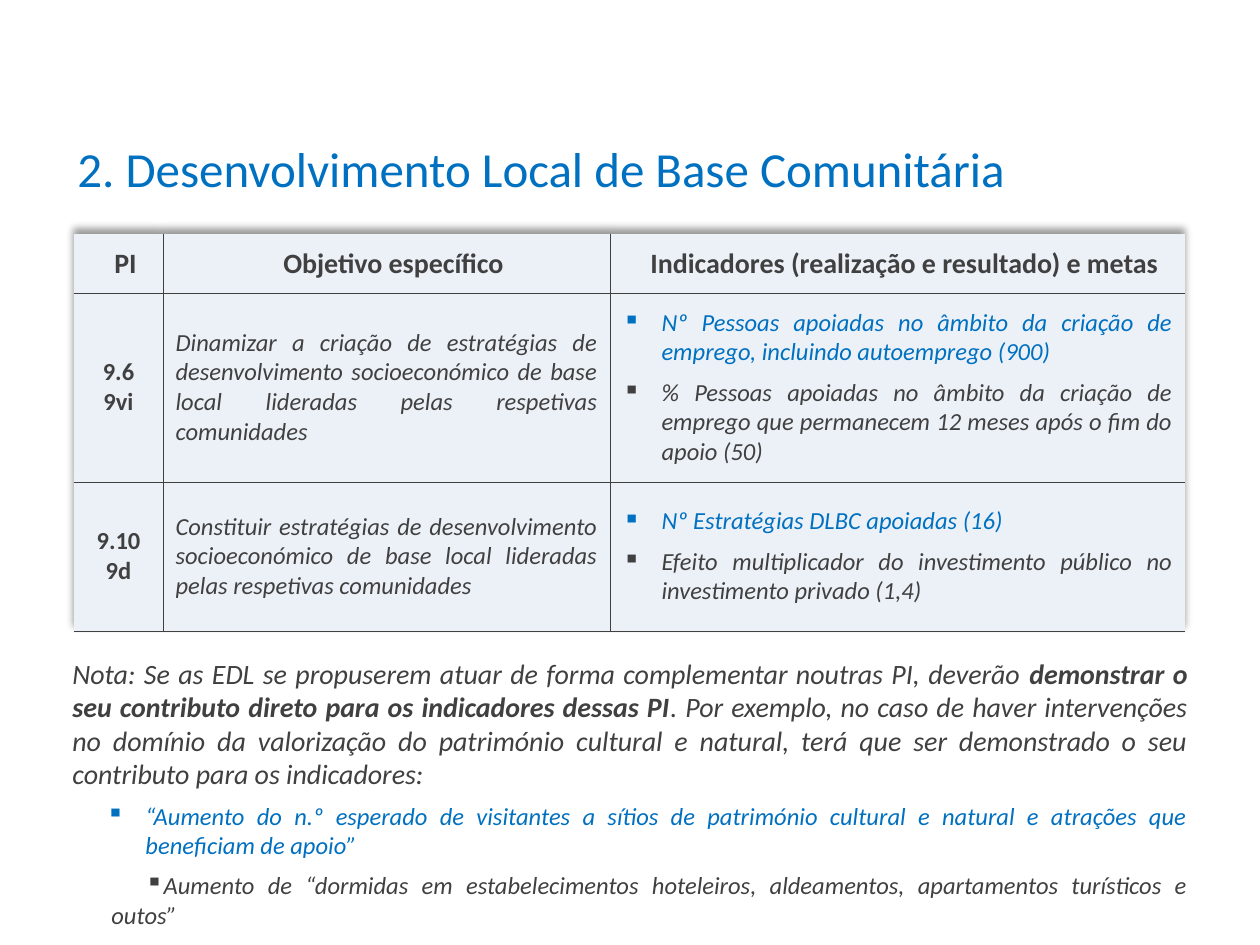
import lxml.etree
import pptx
import pptx.dml.color
import pptx.enum.text
import pptx.oxml.ns
import pptx.util

PX = 914400 / 126
COLORS = {"text": "404040", "accent": "0070C0", "cell": "ECF1F8", "shadow": "000000"}
ALIGN = pptx.enum.text.PP_ALIGN
NO_STYLE = "{2D5ABB26-0587-4C30-8999-92F81FD0307C}"
HEADERS = ["PI", "Objetivo específico", "Indicadores (realização e resultado) e metas"]
PRIORITIES = [
    (["9.6", "9vi"],
     "Dinamizar a criação de estratégias de desenvolvimento socioeconómico de base local "
     "lideradas pelas respetivas comunidades",
     ["Nº Pessoas apoiadas no âmbito da criação de emprego, incluindo autoemprego (900)",
      "% Pessoas apoiadas no âmbito da criação de emprego que permanecem 12 meses após o "
      "fim do apoio (50)"]),
    (["9.10", "9d"],
     "Constituir estratégias de desenvolvimento socioeconómico de base local lideradas "
     "pelas respetivas comunidades",
     ["Nº Estratégias DLBC apoiadas (16)",
      "Efeito multiplicador do investimento público no investimento privado (1,4)"]),
]
NOTE = [
    ("Nota: Se as EDL se propuserem atuar de forma complementar noutras PI, deverão ", False),
    ("demonstrar o seu contributo direto para os indicadores dessas PI", True),
    (". Por exemplo, no caso de haver intervenções no domínio da valorização do património "
     "cultural e natural, terá que ser demonstrado o seu contributo para os indicadores:", False),
]
VISITORS = ("“Aumento do n.º esperado de visitantes a sítios de património cultural e natural "
            "e atrações que beneficiam de apoio”")
STAYS = ("Aumento de “dormidas em estabelecimentos hoteleiros, aldeamentos, apartamentos "
         "turísticos e outos”")


def px(length):
    """Turn pixels into EMU."""
    return pptx.util.Emu(round(length * PX))


def child(parent, tag, **attributes):
    """Append a drawing element with attributes."""
    element = lxml.etree.SubElement(parent, pptx.oxml.ns.qn(tag))
    for name, value in attributes.items():
        element.set(name, str(value))
    return element


def write(frame, text, size=14, color="text", bold=False, italic=False,
          align=ALIGN.LEFT, bullet=None, before=0):
    """Add a paragraph of text, or of (text, bold) parts, to a text frame."""
    first = frame.paragraphs[0]
    paragraph = frame.add_paragraph() if first.runs else first
    paragraph.alignment = align
    if bullet:
        properties = paragraph._p.get_or_add_pPr()
        margin, indent = bullet
        properties.set("marL", str(px(margin)))
        properties.set("indent", str(px(indent)))
        child(properties, "a:buChar", char="▪")
    if before:
        paragraph.space_before = pptx.util.Pt(before)
    for part, strong in [(text, bold)] if isinstance(text, str) else text:
        run = paragraph.add_run()
        run.text = part
        run.font.name = "Calibri"
        run.font.size = pptx.util.Pt(size)
        run.font.bold = strong
        run.font.italic = italic
        run.font.color.rgb = pptx.dml.color.RGBColor.from_string(COLORS[color])


def add_text_frame(slide, left, top, width, height):
    """Add a wrapping text box and return its frame."""
    frame = slide.shapes.add_textbox(px(left), px(top), px(width), px(height)).text_frame
    frame.word_wrap = True
    return frame


def style_cell(cell, sides):
    """Rule the given sides of a cell, then fill it."""
    cell.vertical_anchor = pptx.enum.text.MSO_ANCHOR.MIDDLE
    properties = cell._tc.get_or_add_tcPr()
    for side in sides:
        line = child(properties, f"a:ln{side}", w=pptx.util.Pt(0.25))
        child(child(line, "a:solidFill"), "a:srgbClr", val=COLORS["text"])
    cell.fill.solid()
    cell.fill.fore_color.rgb = pptx.dml.color.RGBColor.from_string(COLORS["cell"])


def add_shadow(table):
    """Give the table a soft shadow along its top."""
    properties = table._tbl.tblPr
    effects = child(properties, "a:effectLst")
    properties.insert(0, effects)
    shadow = child(effects, "a:outerShdw", blurRad=50800, dist=38100, dir=16200000,
                   algn="b", rotWithShape=0)
    child(child(shadow, "a:srgbClr", val=COLORS["shadow"]), "a:alpha", val=40000)


def add_priorities(slide):
    """Build the table of priorities, objectives and indicators."""
    widths, heights = [89, 447, 575], [59, 189, 149]
    table = slide.shapes.add_table(len(heights), len(widths), px(74), px(234),
                                   px(sum(widths)), px(sum(heights))).table
    table.first_row = table.horz_banding = False
    table._tbl.tblPr.find(pptx.oxml.ns.qn("a:tableStyleId")).text = NO_STYLE
    add_shadow(table)
    for column, width in zip(table.columns, widths):
        column.width = px(width)
    for index, height in enumerate(heights):
        table.rows[index].height = px(height)
        for column, sides in enumerate(["RB", "LRB", "LB"]):
            style_cell(table.cell(index, column), sides if index == 0 else sides.replace("B", "TB"))
    for column, header in enumerate(HEADERS):
        cell = table.cell(0, column)
        cell.margin_left, cell.margin_right = px(15), px(1)
        cell.margin_top, cell.margin_bottom = px(1), px(0)
        write(cell.text_frame, header, size=16, bold=True, align=ALIGN.CENTER)
    for row, (codes, objective, indicators) in enumerate(PRIORITIES, start=1):
        code_frame, objective_frame, indicator_frame = (
            table.cell(row, column).text_frame for column in range(3))
        for code in codes:
            write(code_frame, code, bold=True, align=ALIGN.CENTER)
        write(objective_frame, objective, italic=True, align=ALIGN.JUSTIFY)
        for indicator, color, before in zip(indicators, ["accent", "text"], [0, 6]):
            write(indicator_frame, indicator, color=color, italic=True,
                  align=ALIGN.JUSTIFY, bullet=(39, -39), before=before)


def add_note(slide):
    """Write the note and its two example indicators."""
    frame = add_text_frame(slide, 60, 650, 1140, 258)
    write(frame, NOTE, size=16, italic=True, align=ALIGN.JUSTIFY)
    write(frame, VISITORS, color="accent", italic=True, align=ALIGN.JUSTIFY,
          bullet=(73, -39), before=6)
    write(frame, STAYS, italic=True, align=ALIGN.JUSTIFY, bullet=(39, 34), before=6)


def main():
    """Build and save the slide."""
    deck = pptx.Presentation()
    deck.slide_width, deck.slide_height = px(1260), px(945)
    slide = deck.slides.add_slide(deck.slide_layouts[6])
    title = add_text_frame(slide, 65, 132, 1141, 72)
    write(title, "2. Desenvolvimento Local de Base Comunitária", size=28, color="accent")
    add_priorities(slide)
    add_note(slide)
    deck.save("out.pptx")


if __name__ == "__main__":
    main()
